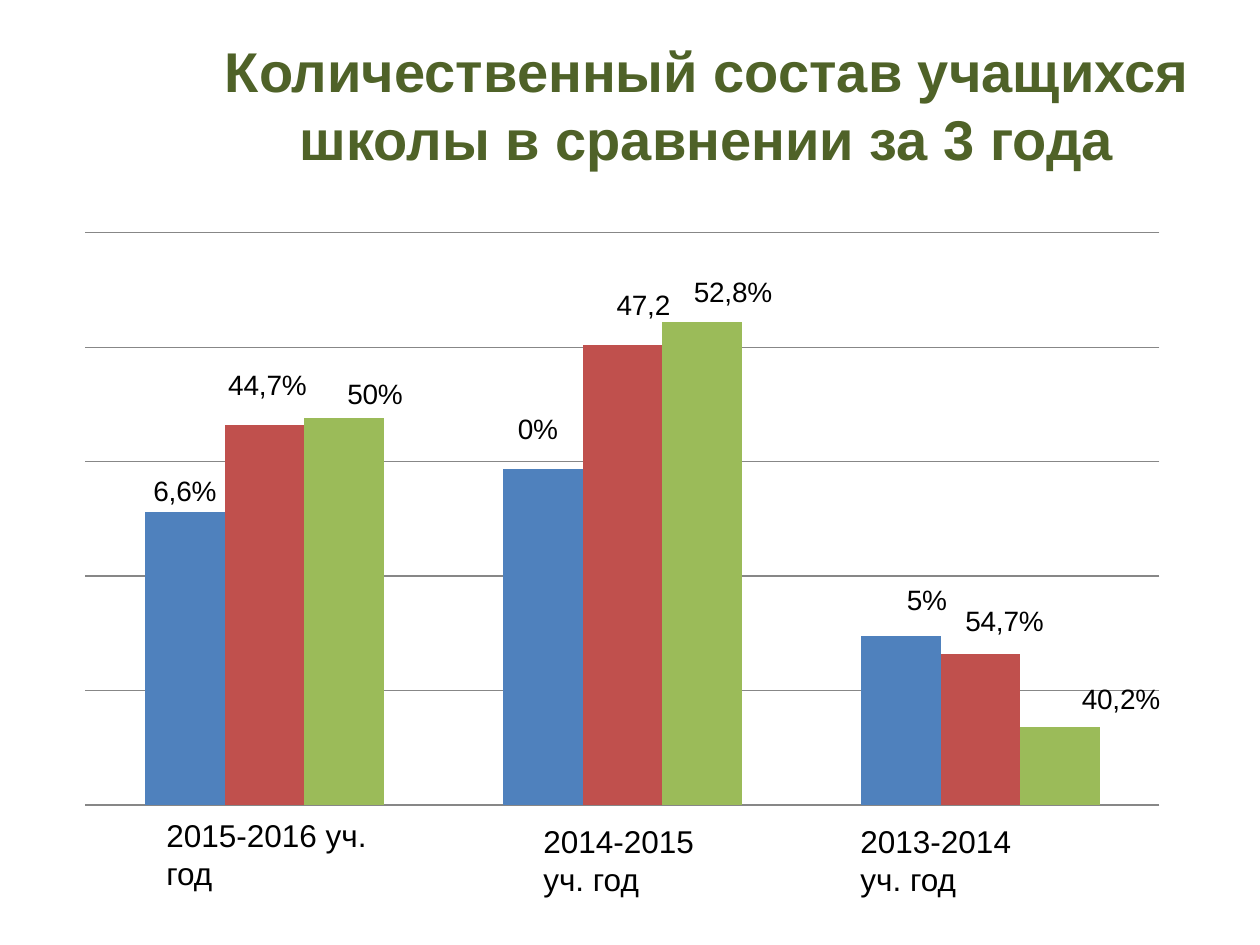
from lxml import etree
from pptx import Presentation
from pptx.chart.data import CategoryChartData
from pptx.dml.color import RGBColor
from pptx.enum.chart import XL_CHART_TYPE, XL_LABEL_POSITION
from pptx.enum.text import MSO_ANCHOR, PP_ALIGN
from pptx.oxml.ns import qn
from pptx.util import Emu, Pt

COLUMNS = XL_CHART_TYPE.COLUMN_CLUSTERED
OUTSIDE_END = XL_LABEL_POSITION.OUTSIDE_END
TOP = MSO_ANCHOR.TOP
MIDDLE = MSO_ANCHOR.MIDDLE
LEFT = PP_ALIGN.LEFT
CENTER = PP_ALIGN.CENTER

EMU_PER_PX = 914400 / 126
TEXT_FONT = "Arial"
CHART_FONT = "Calibri"
COLORS = {
    "title": "4F6228",
    "text": "000000",
    "grid": "878787",
    "blue": "4F81BD",
    "red": "C0504D",
    "green": "9BBB59",
}

SERIES = [
    ("Series 1", "blue", (128, 147, 74),
     [("6,6%", 0, 0), ("0%", -5, -19), ("5%", 26, -15)]),
    ("Series 2", "red", (166, 201, 66),
     [("44,7%", 3, -19), ("47,2", 21, -19), ("54,7%", 24, -12)]),
    ("Series 3", "green", (169, 211, 34),
     [("50%", 31, -4), ("52,8%", 31, -9), ("40,2%", 61, -7)]),
]
YEARS = [
    ("2015-2016 уч. год", 91, 0, 268),
    ("2014-2015 уч. год", 468, 6, 198),
    ("2013-2014 уч. год", 785, 6, 218),
]


def px(length):
    return Emu(round(length * EMU_PER_PX))


def color(name):
    return RGBColor.from_string(COLORS[name])


def style_font(font, size, color_name, bold=False, name=TEXT_FONT):
    font.name = name
    font.size = Pt(size)
    font.bold = bold
    font.color.rgb = color(color_name)


def add_text(slide, box, text, size, color_name, bold=False, align=LEFT, anchor=TOP):
    shape = slide.shapes.add_textbox(*map(px, box))
    frame = shape.text_frame
    frame.word_wrap = True
    frame.vertical_anchor = anchor
    paragraph = frame.paragraphs[0]
    paragraph.alignment = align
    run = paragraph.add_run()
    run.text = text
    style_font(run.font, size, color_name, bold)


def make_layout(**values):
    layout = etree.Element(qn("c:layout"))
    manual = etree.SubElement(layout, qn("c:manualLayout"))
    for tag, value in values.items():
        etree.SubElement(manual, qn(f"c:{tag}")).set("val", str(value))
    return layout


def place_plot(chart):
    plot_area = chart._chartSpace.find(f".//{qn('c:plotArea')}")
    for layout in plot_area.findall(qn("c:layout")):
        plot_area.remove(layout)
    plot_area.insert(0, make_layout(
        layoutTarget="inner", xMode="edge", yMode="edge",
        x=0.02, y=0.02, w=0.96, h=0.96))


def add_point_labels(series, labels, width, height):
    data_labels = series.data_labels
    data_labels.show_value = True
    style_font(data_labels.font, 16, "text", bold=True)
    for point, (text, _, _) in zip(series.points, labels):
        label = point.data_label
        run = label.text_frame.paragraphs[0].add_run()
        run.text = text
        style_font(run.font, 16, "text")
        label.position = OUTSIDE_END
    for index in series._element.iterfind(f".//{qn('c:dLbl')}/{qn('c:idx')}"):
        _, shift_x, shift_y = labels[int(index.get("val"))]
        index.addnext(make_layout(x=round(shift_x / width, 4), y=round(shift_y / height, 4)))
    for leader_lines in series._element.iterfind(f".//{qn('c:showLeaderLines')}"):
        leader_lines.set("val", "0")


def add_pupil_chart(slide, box):
    _, _, width, height = box
    data = CategoryChartData()
    data.categories = ["1", "2", "3"]
    for name, _, values, _ in SERIES:
        data.add_series(name, values)
    chart = slide.shapes.add_chart(COLUMNS, *map(px, box), data).chart
    chart.has_legend = False
    chart.has_title = False
    style_font(chart.font, 10, "text", name=CHART_FONT)

    chart.category_axis.visible = False
    value_axis = chart.value_axis
    value_axis.visible = False
    value_axis.minimum_scale = 0
    value_axis.maximum_scale = 250
    value_axis.major_unit = 50
    value_axis.has_major_gridlines = True
    grid_line = value_axis.major_gridlines.format.line
    grid_line.color.rgb = color("grid")
    grid_line.width = Pt(0.75)

    plot = chart.plots[0]
    plot.gap_width = 150
    plot.overlap = 0
    plot.vary_by_categories = False
    for series, (_, color_name, _, labels) in zip(plot.series, SERIES):
        series.format.fill.solid()
        series.format.fill.fore_color.rgb = color(color_name)
        add_point_labels(series, labels, width, height)
    place_plot(chart)


def add_years(slide, box):
    left, top, _, height = box
    for text, shift_x, shift_y, width in YEARS:
        add_text(slide, (left + shift_x, top + shift_y, width, height), text, 18, "text")


def main():
    presentation = Presentation()
    presentation.slide_width = px(1260)
    presentation.slide_height = px(945)
    slide = presentation.slides.add_slide(presentation.slide_layouts[6])
    add_text(slide, (207, 39, 1000, 130),
             "Количественный состав учащихся школы в сравнении за 3 года",
             32, "title", bold=True, align=CENTER, anchor=MIDDLE)
    add_pupil_chart(slide, (63, 221, 1119, 596))
    add_years(slide, (63, 810, 1119, 89))
    presentation.save("out.pptx")


if __name__ == "__main__":
    main()
